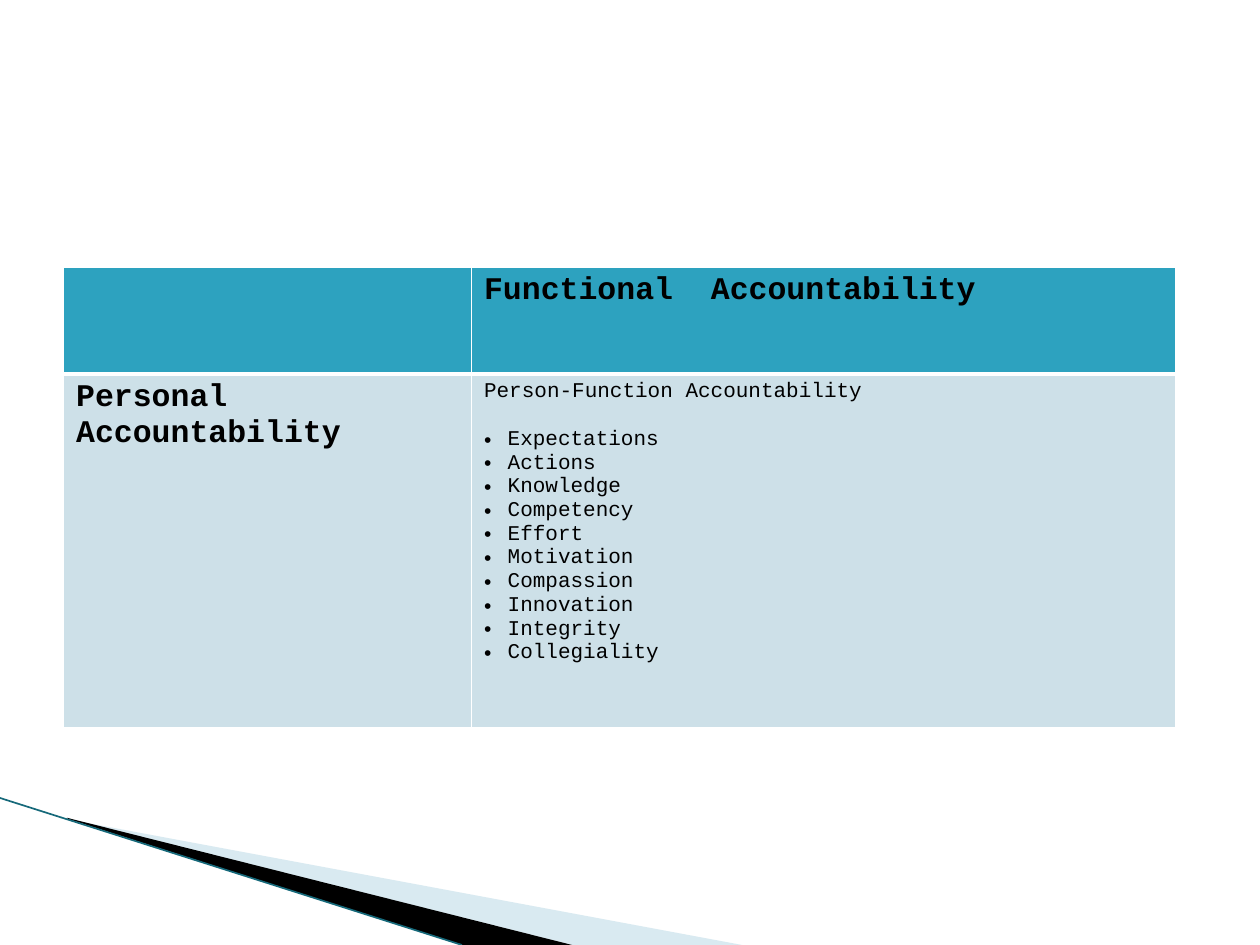
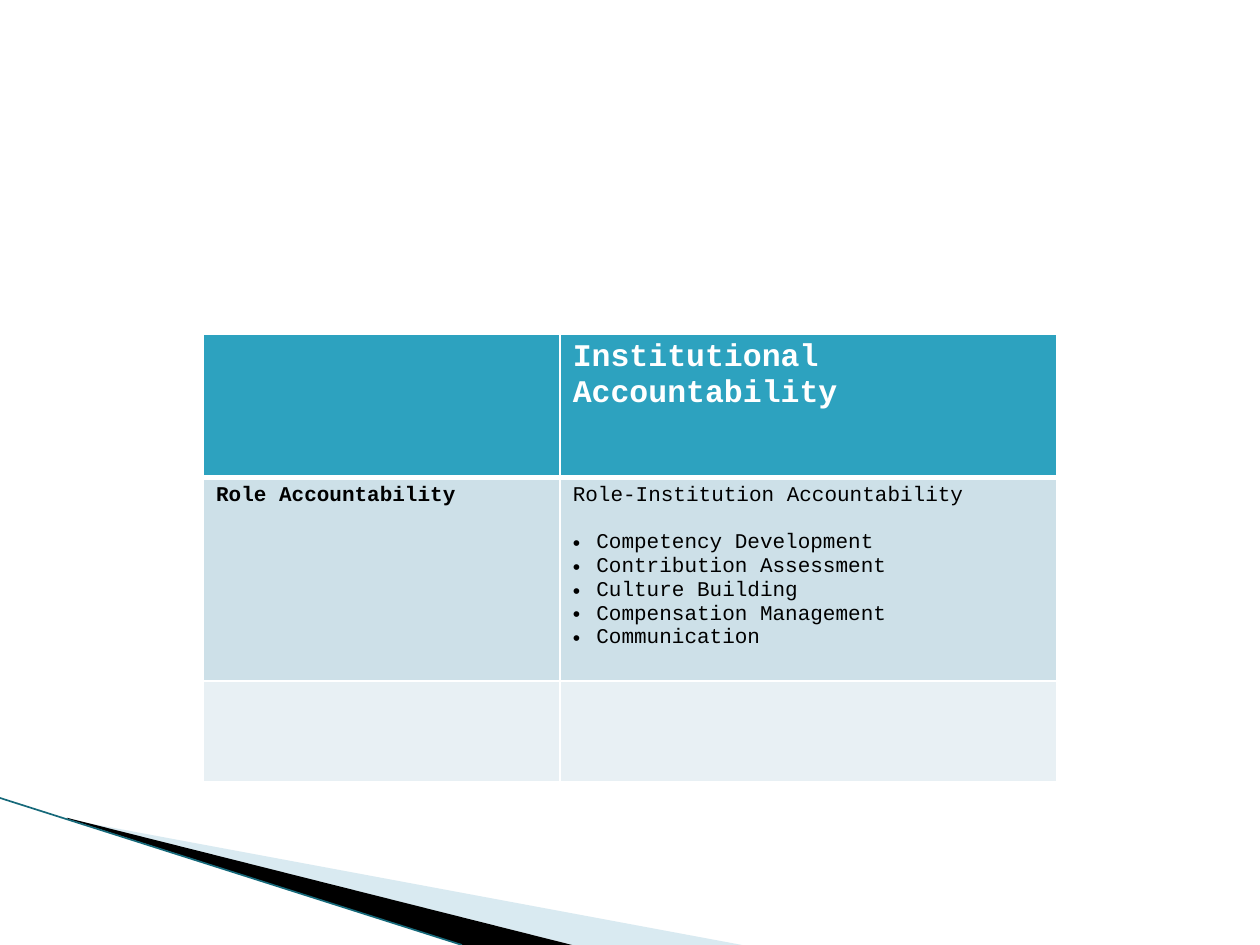
from dataclasses import dataclass

from lxml.etree import SubElement
from pptx import Presentation
from pptx.dml.color import RGBColor
from pptx.enum.shapes import MSO_CONNECTOR
from pptx.oxml.ns import qn
from pptx.util import Pt

COLORS = {
    "header": "2DA2BF",
    "body": "CDE0E8",
    "spare": "E8F0F4",
    "wedge": "A0CBDC",
    "edge": "16697A",
    "black": "000000",
    "white": "FFFFFF",
}
FONT = "Courier New"
BULLET_INDENT = 13.5
BLANK_LAYOUT = 6


@dataclass(frozen=True)
class Wedge:
    points: tuple[tuple[float, float], ...]
    color: str
    alpha: int = 100


@dataclass(frozen=True)
class AccountabilityTable:
    left: float
    top: float
    widths: tuple[float, ...]
    heights: tuple[float, ...]
    header: str
    header_color: str
    label: str
    label_size: float
    lead: str
    items: tuple[str, ...]


WEDGES = (
    Wedge(((39.6, 468.4), (424, 540), (327, 540), (39.6, 468)), "wedge", 40),
    Wedge(((38.2, 467.3), (327, 540), (264, 540), (38.9, 468)), "black"),
)
TABLES = (
    AccountabilityTable(
        36.3, 152.6, (233.1, 402.3), (61.2, 202.3),
        "Functional  Accountability", "black", "Personal Accountability", 18,
        "Person-Function Accountability",
        ("Expectations", "Actions", "Knowledge", "Competency", "Effort",
         "Motivation", "Compassion", "Innovation", "Integrity", "Collegiality"),
    ),
    AccountabilityTable(
        116.3, 190.8, (203.8, 283.5), (82.2, 116.2, 57.4),
        "Institutional Accountability", "white", "Role Accountability", 12,
        "Role-Institution Accountability",
        ("Competency Development", "Contribution Assessment",
         "Culture Building", "Compensation Management", "Communication"),
    ),
)


def rgb(name: str) -> RGBColor:
    return RGBColor.from_string(COLORS[name])


def add_wedge(s, wedge: Wedge) -> None:
    points = [(Pt(x), Pt(y)) for x, y in wedge.points]
    builder = s.shapes.build_freeform(*points[0], scale=1.0)
    builder.add_line_segments(points[1:], close=True)
    sp = builder.convert_to_shape()
    sp.shadow.inherit = False
    sp.fill.solid()
    sp.fill.fore_color.rgb = rgb(wedge.color)
    sp.line.fill.background()
    if wedge.alpha < 100:
        color = sp.fill._xPr.find(qn("a:solidFill"))[0]
        SubElement(color, qn("a:alpha"), val=str(wedge.alpha * 1000))


def add_corner(s) -> None:
    for wedge in WEDGES:
        add_wedge(s, wedge)
    edge = s.shapes.add_connector(
        MSO_CONNECTOR.STRAIGHT, Pt(0), Pt(456), Pt(264), Pt(540))
    edge.line.color.rgb = rgb("edge")
    edge.line.width = Pt(0.95)
    SubElement(edge._element.spPr, qn("a:effectLst"))


def add_text(tf, text: str, *, size: float = 12, color: str = "black",
             bold: bool = False, bullet: bool = False, before: float = 0) -> None:
    p = tf.add_paragraph() if tf.text else tf.paragraphs[0]
    if bullet:
        pPr = p._p.get_or_add_pPr()
        pPr.set("marL", str(Pt(BULLET_INDENT)))
        pPr.set("indent", str(-Pt(BULLET_INDENT)))
        SubElement(pPr, qn("a:buFont"), typeface="Arial")
        SubElement(pPr, qn("a:buChar"), char="•")
    if before:
        p.space_before = Pt(before)
    r = p.add_run()
    r.text = text
    r.font.name = FONT
    r.font.size = Pt(size)
    r.font.bold = bold
    r.font.color.rgb = rgb(color)


def style_cell(cell, row: int) -> None:
    tcPr = cell._tc.get_or_add_tcPr()
    widths = {"L": 1, "R": 1, "T": 3 if row == 1 else 1, "B": 3 if row == 0 else 1}
    for side, width in widths.items():
        ln = SubElement(tcPr, qn(f"a:ln{side}"), w=str(Pt(width)))
        fill = SubElement(ln, qn("a:solidFill"))
        SubElement(fill, qn("a:srgbClr"), val=COLORS["white"])
    cell.fill.solid()
    cell.fill.fore_color.rgb = rgb(("header", "body", "spare")[row])


def add_accountability_table(s, spec: AccountabilityTable) -> None:
    table = s.shapes.add_table(
        len(spec.heights), len(spec.widths), Pt(spec.left), Pt(spec.top),
        Pt(sum(spec.widths)), Pt(sum(spec.heights))).table
    table.horz_banding = False
    for column, width in zip(table.columns, spec.widths):
        column.width = Pt(width)
    for i, (row, height) in enumerate(zip(table.rows, spec.heights)):
        row.height = Pt(height)
        for cell in row.cells:
            style_cell(cell, i)

    add_text(table.cell(0, 1).text_frame, spec.header,
             size=18, color=spec.header_color, bold=True)
    add_text(table.cell(1, 0).text_frame, spec.label,
             size=spec.label_size, bold=True)
    tf = table.cell(1, 1).text_frame
    add_text(tf, spec.lead)
    for i, item in enumerate(spec.items):
        add_text(tf, item, bullet=True, before=13.6 if i == 0 else 0)


def main() -> None:
    prs = Presentation()
    prs.slide_width, prs.slide_height = Pt(720), Pt(540)
    for spec in TABLES:
        s = prs.slides.add_slide(prs.slide_layouts[BLANK_LAYOUT])
        add_corner(s)
        add_accountability_table(s, spec)
    prs.save("out.pptx")


if __name__ == "__main__":
    main()
